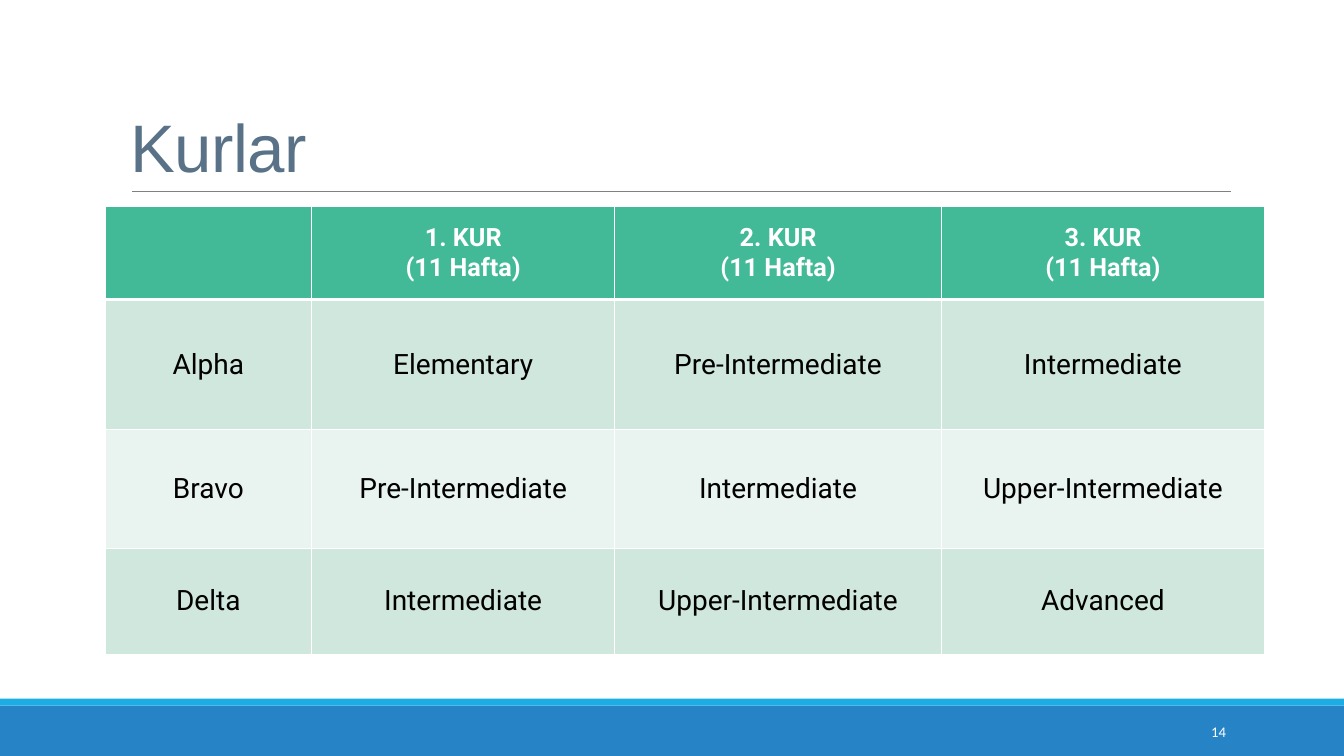
"""Build the course level table slide."""
from lxml.etree import SubElement
from pptx import Presentation
from pptx.dml.color import RGBColor
from pptx.enum.shapes import MSO_CONNECTOR, MSO_SHAPE
from pptx.enum.text import MSO_ANCHOR, PP_ALIGN
from pptx.oxml.ns import qn
from pptx.util import Pt

WHITE = RGBColor(0xFF, 0xFF, 0xFF)
BLACK = RGBColor(0, 0, 0)
GRAY = RGBColor(0x80, 0x80, 0x80)
SLATE = RGBColor(0x59, 0x72, 0x87)
BLUE = RGBColor(0x26, 0x83, 0xC6)
CYAN = RGBColor(0x1C, 0xAD, 0xE4)
GREEN = RGBColor(0x42, 0xBA, 0x97)
BANDS = [RGBColor(0xE9, 0xF3, 0xEF), RGBColor(0xCF, 0xE7, 0xDD)]

TITLE = "Kurlar"
PAGE_NUMBER = "14"
LEVELS = [
    ["", "1. KUR\n(11 Hafta)", "2. KUR\n(11 Hafta)", "3. KUR\n(11 Hafta)"],
    ["Alpha", "Elementary", "Pre-Intermediate", "Intermediate"],
    ["Bravo", "Pre-Intermediate", "Intermediate", "Upper-Intermediate"],
    ["Delta", "Intermediate", "Upper-Intermediate", "Advanced"],
]
COLUMN_WIDTHS = [147.6, 216.6, 233.2, 231]
ROW_HEIGHTS = [66.2, 92.9, 85, 75.6]
FOOTER_BARS = [(504, 36, BLUE), (499, 5, CYAN)]


def style_text(frame, font_name, size, color, align, bold=False):
    """Give every paragraph in a frame the same look."""
    for para in frame.paragraphs:
        para.alignment = align
        para.font.name = font_name
        para.font.size = Pt(size)
        para.font.color.rgb = color
        para.font.bold = bold


def add_label(page, text, box, anchor, font_name, size, color, align):
    """Add a one-line text box and return its paragraph."""
    frame = page.shapes.add_textbox(*map(Pt, box)).text_frame
    frame.word_wrap = True
    frame.vertical_anchor = anchor
    frame.text = text
    style_text(frame, font_name, size, color, align)
    return frame.paragraphs[0]


def add_borders(cell, bottom_width):
    """Draw white borders around a cell."""
    properties = cell._tc.get_or_add_tcPr()
    widths = {"lnL": 1, "lnR": 1, "lnT": 1, "lnB": bottom_width}
    for side, width in widths.items():
        line = SubElement(properties, qn(f"a:{side}"), w=str(Pt(width)))
        fill = SubElement(line, qn("a:solidFill"))
        SubElement(fill, qn("a:srgbClr"), val=str(WHITE))


def add_levels(page):
    """Add the table of levels."""
    table = page.shapes.add_table(
        len(LEVELS), len(COLUMN_WIDTHS), Pt(75), Pt(147.7),
        Pt(sum(COLUMN_WIDTHS)), Pt(sum(ROW_HEIGHTS))).table
    for column, width in zip(table.columns, COLUMN_WIDTHS):
        column.width = Pt(width)
    for index, (row, height) in enumerate(zip(table.rows, ROW_HEIGHTS)):
        row.height = Pt(height)
        header = index == 0
        for cell, text in zip(row.cells, LEVELS[index]):
            cell.text = text
            cell.vertical_anchor = MSO_ANCHOR.MIDDLE
            add_borders(cell, 3 if header else 1)
            cell.fill.solid()
            cell.fill.fore_color.rgb = GREEN if header else BANDS[index % 2]
            style_text(cell.text_frame, "Roboto", 18 if header else 20,
                       WHITE if header else BLACK, PP_ALIGN.CENTER, header)


def main():
    """Build and save the deck."""
    deck = Presentation()
    deck.slide_width, deck.slide_height = Pt(960), Pt(540)
    page = deck.slides.add_slide(deck.slide_layouts[6])

    for top, height, color in FOOTER_BARS:
        bar = page.shapes.add_shape(
            MSO_SHAPE.RECTANGLE, 0, Pt(top), deck.slide_width, Pt(height))
        bar.shadow.inherit = False
        bar.fill.solid()
        bar.fill.fore_color.rgb = color
        bar.line.fill.background()

    rule = page.shapes.add_connector(
        MSO_CONNECTOR.STRAIGHT, Pt(94.3), Pt(136.8), Pt(879), Pt(136.8))
    rule.line.color.rgb = GRAY
    rule.line.width = Pt(0.5)
    SubElement(rule._element.spPr, qn("a:effectLst"))

    title = add_label(page, TITLE, (86.4, 22.3, 792, 114.5), MSO_ANCHOR.BOTTOM,
                      "Arial", 48, SLATE, PP_ALIGN.LEFT)
    title.line_spacing = 0.85
    title.runs[0]._r.get_or_add_rPr().set("spc", "-50")

    add_levels(page)
    add_label(page, PAGE_NUMBER, (779.8, 508.3, 103, 28.8), MSO_ANCHOR.MIDDLE,
              "Calibri", 10.5, WHITE, PP_ALIGN.RIGHT)
    deck.save("out.pptx")


if __name__ == "__main__":
    main()
